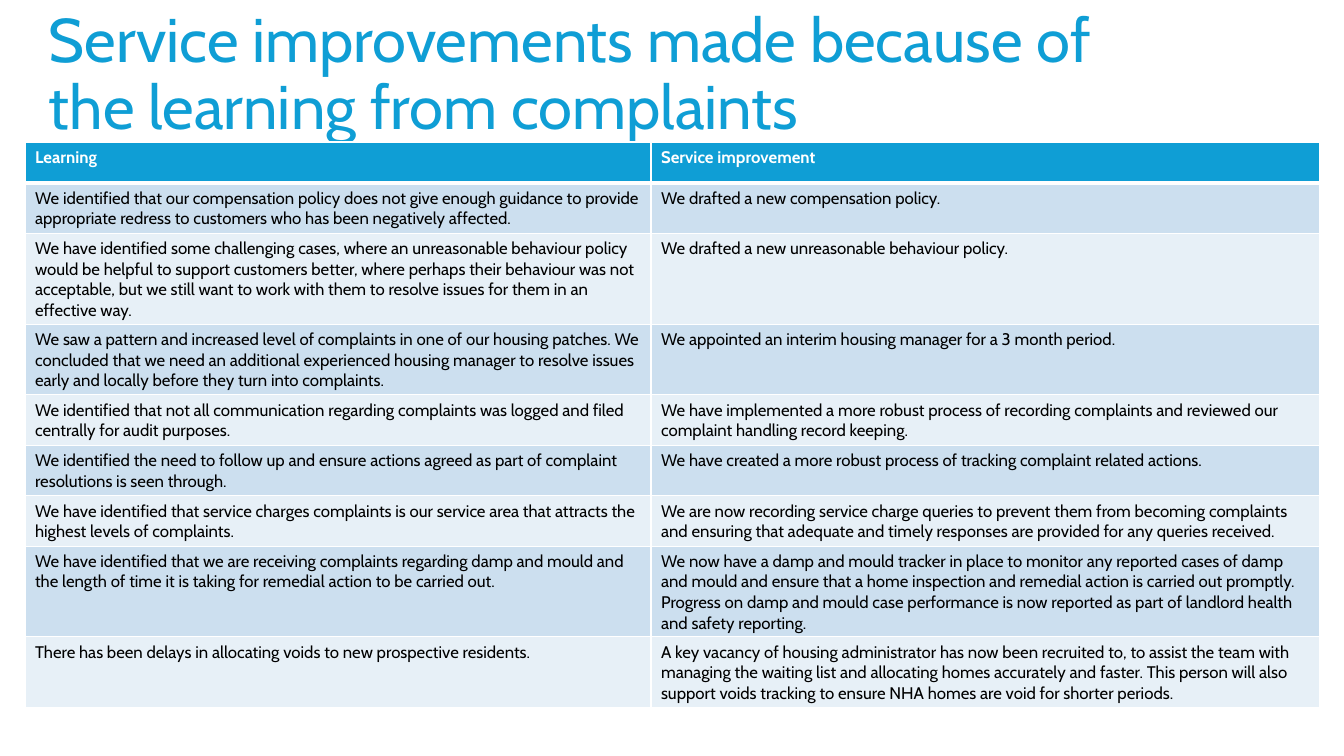
from dataclasses import dataclass

from lxml.etree import SubElement
from pptx import Presentation
from pptx.dml.color import RGBColor as RGB
from pptx.enum.text import MSO_ANCHOR as ANCHOR
from pptx.oxml.ns import qn
from pptx.util import Emu, Pt

TITLE = "Service improvements made because of the learning from complaints"
HEADINGS = ("Learning", "Service improvement")
IMPROVEMENTS = [
    ("We identified that our compensation policy does not give enough guidance to provide "
     "appropriate redress to customers who has been negatively affected.",
     "We drafted a new compensation policy."),
    ("We have identified some challenging cases, where an unreasonable behaviour policy would "
     "be helpful to support customers better, where perhaps their behaviour was not acceptable, "
     "but we still want to work with them to resolve issues for them in an effective way.",
     "We drafted a new unreasonable behaviour policy."),
    ("We saw a pattern and increased level of complaints in one of our housing patches. We "
     "concluded that we need an additional experienced housing manager to resolve issues early "
     "and locally before they turn into complaints.",
     "We appointed an interim housing manager for a 3 month period."),
    ("We identified that not all communication regarding complaints was logged and filed "
     "centrally for audit purposes.",
     "We have implemented a more robust process of recording complaints and reviewed our "
     "complaint handling record keeping."),
    ("We identified the need to follow up and ensure actions agreed as part of complaint "
     "resolutions is seen through.",
     "We have created a more robust process of tracking complaint related actions."),
    ("We have identified that service charges complaints is our service area that attracts the "
     "highest levels of complaints.",
     "We are now recording service charge queries to prevent them from becoming complaints and "
     "ensuring that adequate and timely responses are provided for any queries received."),
    ("We have identified that we are receiving complaints regarding damp and mould and the "
     "length of time it is taking for remedial action to be carried out.",
     "We now have a damp and mould tracker in place to monitor any reported cases of damp and "
     "mould and ensure that a home inspection and remedial action is carried out promptly. "
     "Progress on damp and mould case performance is now reported as part of landlord health "
     "and safety reporting."),
    ("There has been delays in allocating voids to new prospective residents.",
     "A key vacancy of housing administrator has now been recruited to, to assist the team with "
     "managing the waiting list and allocating homes accurately and faster. This person will "
     "also support voids tracking to ensure NHA homes are void for shorter periods."),
]

SLIDE_SIZE = (1344, 756)
TITLE_BOX = (39, 3, 1159, 146)
TABLE_LEFT, TABLE_TOP = 25, 142
COLUMN_WIDTHS = (626, 669)
MIN_ROW_HEIGHT = 41


@dataclass(frozen=True)
class Theme:
    font: str = "Cabin"
    accent: str = "0F9ED5"
    bands: tuple = ("CCDFEF", "E7F0F7")
    ink: str = "000000"
    white: str = "FFFFFF"
    title_size: int = 44
    body_size: int = 12
    rule: int = 1
    header_rule: int = 3


THEME = Theme()


def px(length):
    return Emu(round(length * 914400 / 100.8))


def write(frame, text, size, color, bold=False):
    frame.word_wrap = True
    run = frame.paragraphs[0].add_run()
    run.text = text
    run.font.name = THEME.font
    run.font.size = Pt(size)
    run.font.bold = bold
    run.font.color.rgb = RGB.from_string(color)


def add_borders(cell, top, bottom):
    """Draw white rules on all four sides; widths in points."""
    properties = cell._tc.get_or_add_tcPr()
    widths = {"L": THEME.rule, "R": THEME.rule, "T": top, "B": bottom}
    for side, width in widths.items():
        line = SubElement(properties, qn(f"a:ln{side}"), w=str(Pt(width)))
        fill = SubElement(line, qn("a:solidFill"))
        SubElement(fill, qn("a:srgbClr"), val=THEME.white)


def add_title(slide):
    frame = slide.shapes.add_textbox(*map(px, TITLE_BOX)).text_frame
    frame.vertical_anchor = ANCHOR.MIDDLE
    write(frame, TITLE, THEME.title_size, THEME.accent)
    frame.paragraphs[0].line_spacing = 0.9


def add_improvements(slide):
    rows = [HEADINGS, *IMPROVEMENTS]
    table = slide.shapes.add_table(
        len(rows), len(HEADINGS), px(TABLE_LEFT), px(TABLE_TOP),
        px(sum(COLUMN_WIDTHS)), px(MIN_ROW_HEIGHT * len(rows))).table
    for column, width in zip(table.columns, COLUMN_WIDTHS):
        column.width = px(width)
    for r, texts in enumerate(rows):
        header = r == 0
        fill = THEME.accent if header else THEME.bands[(r - 1) % 2]
        top = THEME.header_rule if r == 1 else THEME.rule
        bottom = THEME.header_rule if header else THEME.rule
        for c, text in enumerate(texts):
            cell = table.cell(r, c)
            add_borders(cell, top, bottom)
            cell.fill.solid()
            cell.fill.fore_color.rgb = RGB.from_string(fill)
            write(cell.text_frame, text, THEME.body_size,
                  THEME.white if header else THEME.ink, header)


def main():
    deck = Presentation()
    deck.slide_width, deck.slide_height = map(px, SLIDE_SIZE)
    slide = deck.slides.add_slide(deck.slide_layouts[6])
    add_title(slide)
    add_improvements(slide)
    deck.save("out.pptx")


if __name__ == "__main__":
    main()
